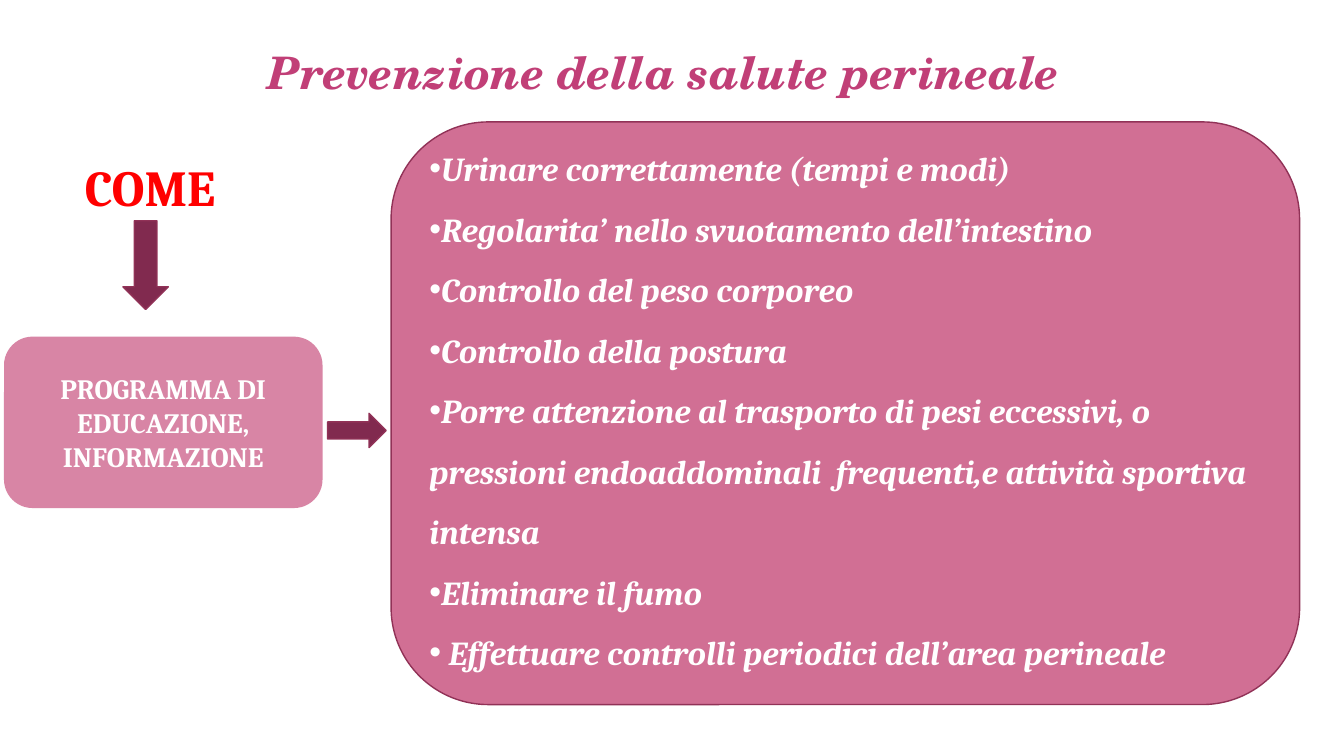
from dataclasses import dataclass

from lxml import etree
from pptx import Presentation
from pptx.dml.color import RGBColor
from pptx.enum.shapes import MSO_SHAPE as Preset
from pptx.enum.text import MSO_ANCHOR as Anchor, PP_ALIGN as Align
from pptx.oxml.ns import qn
from pptx.util import Inches, Pt

TITLE = "Prevenzione della salute perineale"
HEADING = "COME"
PROGRAMME = ["PROGRAMMA DI EDUCAZIONE,", "INFORMAZIONE"]
ADVICE = [
    "Urinare correttamente (tempi e modi)",
    "Regolarita’ nello svuotamento dell’intestino",
    "Controllo del peso corporeo",
    "Controllo della postura",
    "Porre attenzione al trasporto di pesi eccessivi, o pressioni "
    "endoaddominali  frequenti,e attività sportiva intensa",
    "Eliminare il fumo",
    " Effettuare controlli periodici dell’area perineale",
]

# left, top, width, height in percent of the slide
AREAS = {
    "title": (8.1, 2.53, 82.52, 11.2),
    "advice": (29.1, 16.13, 67.6, 77.07),
    "heading": (4.95, 18.93, 12.45, 11.33),
    "programme": (0.3, 44.53, 23.7, 22.67),
    "down arrow": (9.15, 29.2, 3.38, 11.73),
    "right arrow": (24.38, 54.67, 4.35, 4.53),
}


@dataclass(frozen=True)
class Theme:
    title_font: str = "TeX Gyre Schola"
    body_font: str = "Cambria"
    pink: str = "C44475"
    title_pink: str = "C13F77"
    plum: str = "812A4F"
    outline: str = "913257"
    red: str = "FF0000"
    white: str = "FFFFFF"
    title_size: int = 32
    heading_size: int = 36
    advice_size: int = 24
    programme_size: int = 20


THEME = Theme()
WIDTH, HEIGHT = Inches(13.33), Inches(7.5)


def place(name):
    left, top, width, height = AREAS[name]
    return [round(share * side / 100) for share, side in
            ((left, WIDTH), (top, HEIGHT), (width, WIDTH), (height, HEIGHT))]


def add_block(slide, preset, name, fill=None, opacity=100, line=None):
    """Add a preset shape; without fill or line that part stays empty."""
    shape = slide.shapes.add_shape(preset, *place(name))
    shape.shadow.inherit = False
    if fill:
        shape.fill.solid()
        shape.fill.fore_color.rgb = RGBColor.from_string(fill)
        if opacity < 100:
            color = shape.fill._xPr.find(qn("a:solidFill"))[0]
            etree.SubElement(color, qn("a:alpha")).set("val", str(opacity * 1000))
    else:
        shape.fill.background()
    if line:
        shape.line.color.rgb = RGBColor.from_string(line)
        shape.line.width = Pt(1)
    else:
        shape.line.fill.background()
    return shape


def write(shape, lines, size, color, font=THEME.body_font, italic=False,
          align=Align.CENTER, anchor=Anchor.MIDDLE, spacing=None, bullet=None):
    frame = shape.text_frame
    frame.word_wrap = True
    frame.vertical_anchor = anchor
    for index, line in enumerate(lines):
        paragraph = frame.add_paragraph() if index else frame.paragraphs[0]
        paragraph.alignment = align
        if spacing:
            paragraph.line_spacing = spacing
        if bullet:
            properties = paragraph._p.get_or_add_pPr()
            etree.SubElement(properties, qn("a:buFont")).set("typeface", "Arial")
            etree.SubElement(properties, qn("a:buChar")).set("char", bullet)
        run = paragraph.add_run()
        run.text = line
        run.font.name = font
        run.font.size = Pt(size)
        run.font.bold = True
        run.font.italic = italic
        run.font.color.rgb = RGBColor.from_string(color)


def main():
    presentation = Presentation()
    presentation.slide_width, presentation.slide_height = WIDTH, HEIGHT
    slide = presentation.slides.add_slide(presentation.slide_layouts[6])

    title = slide.shapes.add_textbox(*place("title"))
    write(title, [TITLE], THEME.title_size, THEME.title_pink, THEME.title_font,
          italic=True, anchor=Anchor.BOTTOM, spacing=0.9)

    advice = add_block(slide, Preset.ROUNDED_RECTANGLE, "advice",
                       THEME.pink, 77, THEME.outline)
    write(advice, ADVICE, THEME.advice_size, THEME.white, italic=True,
          align=Align.LEFT, spacing=1.5, bullet="•")
    advice.text_frame.margin_bottom = Inches(0.31)

    heading = add_block(slide, Preset.FLOWCHART_ALTERNATE_PROCESS, "heading")
    write(heading, [HEADING], THEME.heading_size, THEME.red)

    programme = add_block(slide, Preset.FLOWCHART_ALTERNATE_PROCESS, "programme",
                          THEME.pink, 65)
    write(programme, PROGRAMME, THEME.programme_size, THEME.white)

    for preset, name in ((Preset.DOWN_ARROW, "down arrow"),
                         (Preset.RIGHT_ARROW, "right arrow")):
        add_block(slide, preset, name, THEME.plum, line=THEME.outline)

    presentation.save("out.pptx")


if __name__ == "__main__":
    main()
